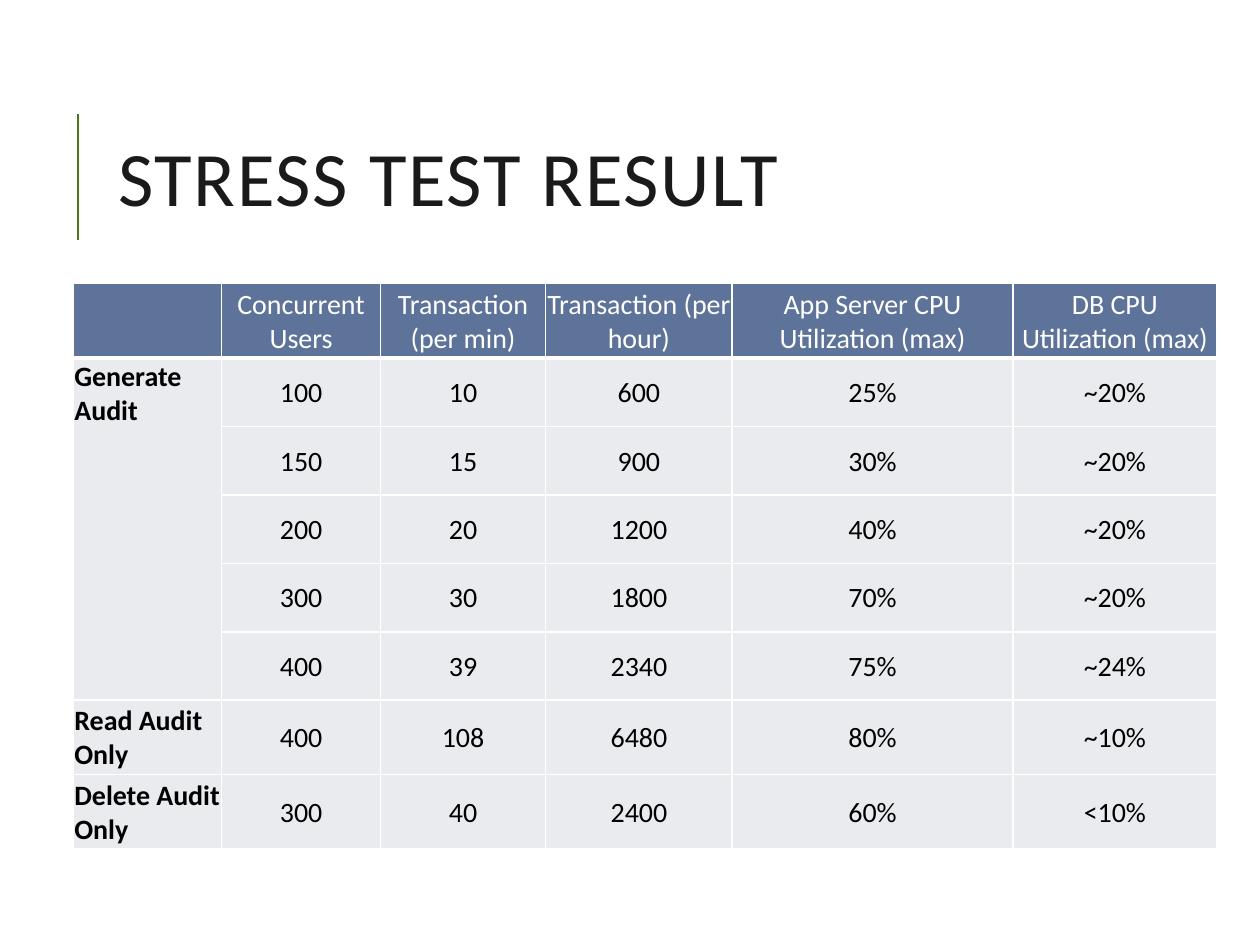
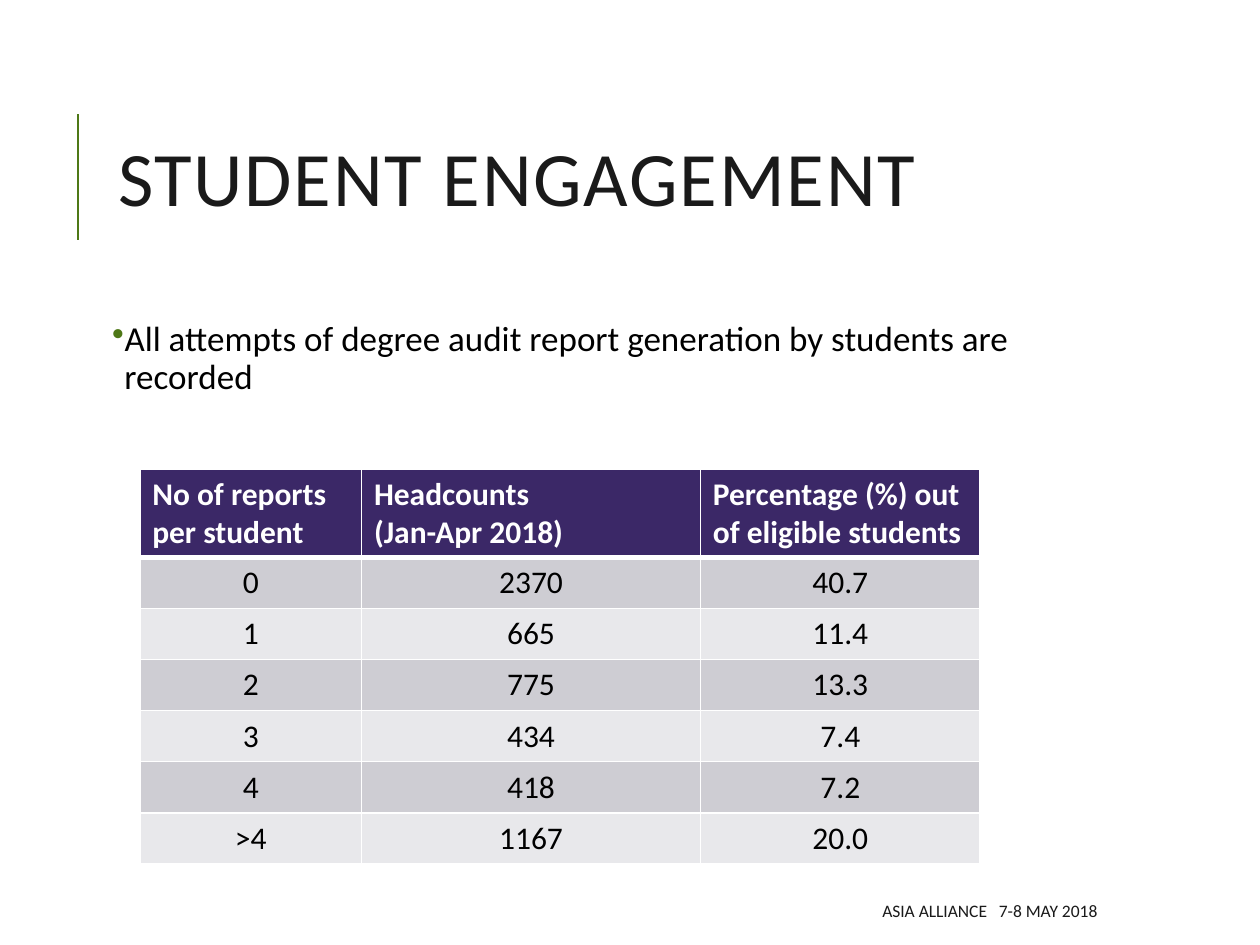
"""Build two slides: stress test results and student engagement."""
from lxml import etree
from pptx import Presentation
from pptx.dml.color import RGBColor
from pptx.enum.shapes import MSO_CONNECTOR
from pptx.enum.text import MSO_ANCHOR, PP_ALIGN
from pptx.oxml.ns import qn
from pptx.util import Cm, Pt

LEFT, CENTER, RIGHT = PP_ALIGN.LEFT, PP_ALIGN.CENTER, PP_ALIGN.RIGHT
TOP, MIDDLE = MSO_ANCHOR.TOP, MSO_ANCHOR.MIDDLE
STRAIGHT = MSO_CONNECTOR.STRAIGHT
FONT = "Calibri"
GREEN, INK, BLACK, WHITE = "4E7817", "1A1A1A", "000000", "FFFFFF"
CONTENT_LEFT, CONTENT_WIDTH = 2.13, 20.24


def style_paragraphs(frame, size, colour, align=LEFT, bold=False):
    for para in frame.paragraphs:
        para.alignment = align
        for span in para.runs:
            span.font.name, span.font.size, span.font.bold = FONT, Pt(size), bold
            span.font.color.rgb = RGBColor.from_string(colour)


def add_text_box(page, left, top, width, height, text, anchor):
    box = page.shapes.add_textbox(Cm(left), Cm(top), Cm(width), Cm(height))
    frame = box.text_frame
    frame.word_wrap = True
    frame.vertical_anchor = anchor
    frame.text = text
    return frame


deck = Presentation()
deck.slide_width, deck.slide_height = Cm(25.4), Cm(19.05)

pages = []
for title in ("STRESS TEST RESULT", "STUDENT ENGAGEMENT"):
    page = deck.slides.add_slide(deck.slide_layouts[6])
    pages.append(page)
    accent = page.shapes.add_connector(STRAIGHT, Cm(1.57), Cm(4.83), Cm(1.57), Cm(2.29))
    accent.line.color.rgb = RGBColor.from_string(GREEN)
    accent.line.width = Pt(1.5)
    etree.SubElement(accent._element.spPr, qn("a:effectLst"))
    frame = add_text_box(page, CONTENT_LEFT, 1.63, CONTENT_WIDTH, 4.17, title, MIDDLE)
    style_paragraphs(frame, 44, INK)
    para = frame.paragraphs[0]
    para.line_spacing = 0.8
    para.runs[0].font._element.set("spc", "100")

stress_page, engagement_page = pages

frame = add_text_box(
    engagement_page, CONTENT_LEFT, 6.35, CONTENT_WIDTH, 11.18,
    "All attempts of degree audit report generation by students are recorded", TOP)
frame.margin_left = frame.margin_right = frame.margin_top = frame.margin_bottom = Cm(0.13)
style_paragraphs(frame, 20, BLACK)
para = frame.paragraphs[0]
para.line_spacing, para.space_before, para.space_after = 0.9, Pt(12), Pt(2)
properties = para._p.get_or_add_pPr()
properties.set("marL", str(Cm(0.25)))
properties.set("indent", str(-Cm(0.25)))
bullet_colour = etree.SubElement(properties, qn("a:buClr"))
etree.SubElement(bullet_colour, qn("a:srgbClr"), val=GREEN)
etree.SubElement(properties, qn("a:buChar"), char="•")

frame = add_text_box(engagement_page, 10.08, 17.98, 12.29, 0.76, "ASIA ALLIANCE", MIDDLE)
para = frame.paragraphs[0]
gap = para.add_run()
gap.text = " "
gap.font._element.set("spc", "450")
para.add_run().text = "7-8 MAY 2018"
style_paragraphs(frame, 10, INK, RIGHT)

stress_rows = [
    ["", "Concurrent Users", "Transaction (per min)", "Transaction (per hour)",
     "App Server CPU Utilization (max)", "DB CPU Utilization (max)"],
    ["Generate Audit", "100", "10", "600", "25%", "~20%"],
    ["", "150", "15", "900", "30%", "~20%"],
    ["", "200", "20", "1200", "40%", "~20%"],
    ["", "300", "30", "1800", "70%", "~20%"],
    ["", "400", "39", "2340", "75%", "~24%"],
    ["Read Audit Only", "400", "108", "6480", "80%", "~10%"],
    ["Delete Audit Only", "300", "40", "2400", "60%", "<10%"],
]
engagement_rows = [
    ["No of reports per student", "Headcounts\n(Jan-Apr 2018)",
     "Percentage (%) out of eligible students"],
    ["0", "2370", "40.7"],
    ["1", "665", "11.4"],
    ["2", "775", "13.3"],
    ["3", "434", "7.4"],
    ["4", "418", "7.2"],
    [">4", "1167", "20.0"],
]
table_plans = [
    dict(page=stress_page, left=1.47, top=5.72, rows=stress_rows, size=16,
         widths=[3, 3.2, 3.33, 3.76, 5.66, 4.11], heights=[1.5] + [1.38] * 5 + [1.5] * 2,
         header="5D739A", bands=["EAEBEF", "EAEBEF"], header_align=CENTER,
         header_bold=False, label_column=True, anchor=MIDDLE, margins=(0.03, 0.03, 0.03, 0)),
    dict(page=engagement_page, left=2.82, top=9.45, rows=engagement_rows, size=18,
         widths=[4.47, 6.83, 5.64], heights=[1.78] + [1.03] * 6,
         header="3B2867", bands=["E8E8EB", "CECDD3"], header_align=LEFT,
         header_bold=True, label_column=False, anchor=TOP, margins=(0.25, 0.25, 0.13, 0.13)),
]

for plan in table_plans:
    rows, widths, heights = plan["rows"], plan["widths"], plan["heights"]
    table = plan["page"].shapes.add_table(
        len(rows), len(widths), Cm(plan["left"]), Cm(plan["top"]),
        Cm(sum(widths)), Cm(sum(heights))).table
    for column, width in zip(table.columns, widths):
        column.width = Cm(width)
    for row, height in zip(table.rows, heights):
        row.height = Cm(height)
    for row_index, row_texts in enumerate(rows):
        is_header = row_index == 0
        for column_index, text in enumerate(row_texts):
            cell = table.cell(row_index, column_index)
            is_label = plan["label_column"] and column_index == 0 and not is_header
            cell.text_frame.text = text
            cell.vertical_anchor = TOP if text == "Generate Audit" else plan["anchor"]
            (cell.margin_left, cell.margin_right,
             cell.margin_top, cell.margin_bottom) = map(Cm, plan["margins"])
            if is_header:
                style_paragraphs(cell.text_frame, plan["size"], WHITE,
                                 plan["header_align"], plan["header_bold"])
            else:
                style_paragraphs(cell.text_frame, plan["size"], BLACK,
                                 LEFT if is_label else CENTER, is_label)
            for side in ("lnL", "lnR", "lnT", "lnB"):
                thick = (row_index, side) in ((0, "lnB"), (1, "lnT"))
                border = etree.SubElement(cell._tc.get_or_add_tcPr(), qn(f"a:{side}"),
                                          w=str(Pt(3 if thick else 1)))
                border_fill = etree.SubElement(border, qn("a:solidFill"))
                etree.SubElement(border_fill, qn("a:srgbClr"), val=WHITE)
            cell.fill.solid()
            cell.fill.fore_color.rgb = RGBColor.from_string(
                plan["header"] if is_header else plan["bands"][row_index % 2])
    if plan["label_column"]:
        table.cell(1, 0).merge(table.cell(5, 0))

deck.save("out.pptx")
